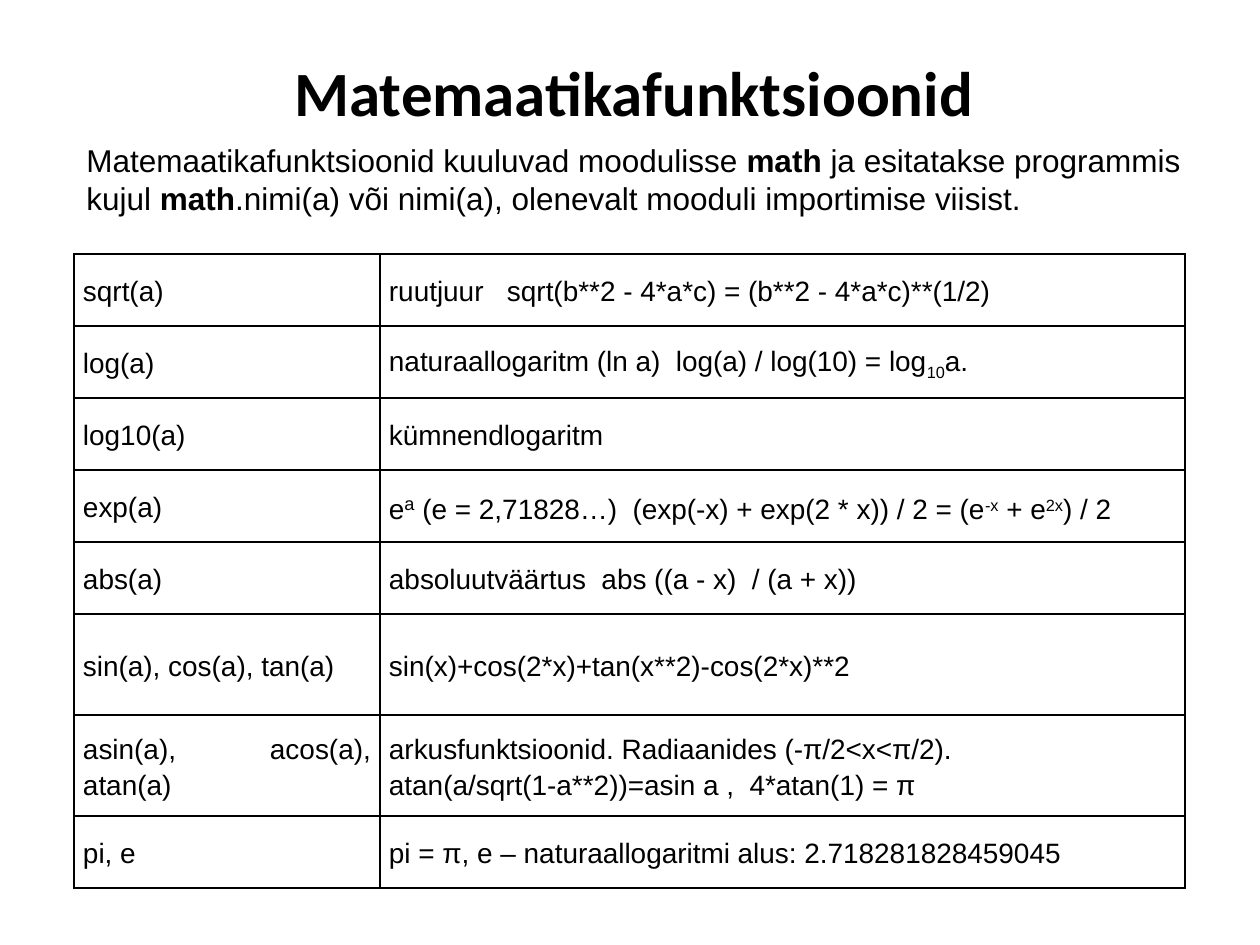
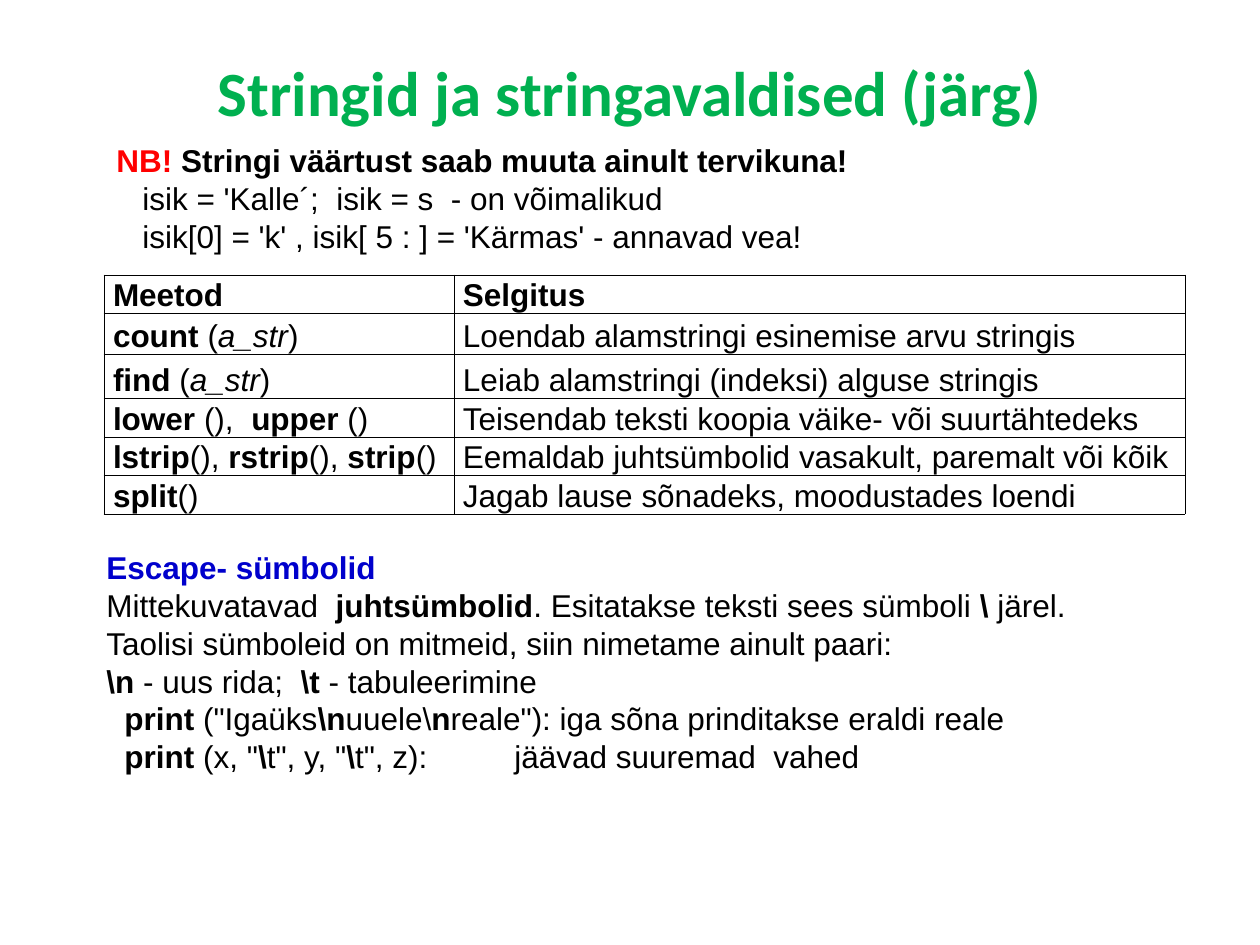
"""Build two slides on mathematical functions and string methods."""
from dataclasses import dataclass
from functools import partial

from lxml.etree import SubElement
from pptx import Presentation
from pptx.dml.color import RGBColor as RGB
from pptx.enum.text import MSO_ANCHOR as ANCHOR, PP_ALIGN as ALIGN
from pptx.oxml.ns import qn
from pptx.util import Emu, Pt

PX = 914400 / 126


@dataclass(frozen=True)
class Theme:
    ink: str = "000000"
    green: str = "00B050"
    red: str = "FF0000"
    blue: str = "0000CC"
    head_font: str = "Calibri"
    body_font: str = "Arial"
    title: int = 36
    body: int = 18
    cell: int = 16


T = Theme()


@dataclass
class Run:
    text: str
    bold: bool = False
    italic: bool = False
    color: str = T.ink
    size: int = 0
    base: int = 0


@dataclass
class Par:
    runs: list
    indent: int = 0
    tab: int = 0


B = partial(Run, bold=True)
I = partial(Run, italic=True)
SUP = partial(Run, base=30)
SUB = partial(Run, base=-25)


def px(n):
    return Emu(round(n * PX))


def add_run(p, run, size, font):
    run = Run(run) if isinstance(run, str) else run
    r = p.add_run()
    r.text = run.text
    r.font.name = font
    r.font.size = Pt(run.size or size)
    r.font.bold = run.bold
    r.font.italic = run.italic
    r.font.color.rgb = RGB.from_string(run.color)
    if run.base:
        r.font._element.set("baseline", str(run.base * 1000))


def fill_text(tf, pars, size, font=T.body_font, align=ALIGN.LEFT, spacing=1.0):
    for n, par in enumerate(pars):
        par = par if isinstance(par, Par) else Par(par)
        p = tf.add_paragraph() if n else tf.paragraphs[0]
        p.alignment = align
        p.line_spacing = spacing
        pPr = p._p.get_or_add_pPr()
        if par.indent:
            pPr.set("marL", str(px(par.indent)))
        if par.tab:
            tabs = SubElement(pPr, qn("a:tabLst"))
            SubElement(tabs, qn("a:tab"), pos=str(px(par.tab)), algn="l")
        for run in par.runs:
            add_run(p, run, size, font)


def add_text(s, x, y, w, h, pars, size=T.body, anchor=ANCHOR.TOP, **style):
    tf = s.shapes.add_textbox(px(x), px(y), px(w), px(h)).text_frame
    tf.word_wrap = True
    tf.vertical_anchor = anchor
    fill_text(tf, pars, size, **style)


def add_title(s, text, color=T.ink, x=63):
    add_text(s, x, 38, 1134, 107, [[B(text, color=color)]], T.title,
             ANCHOR.MIDDLE, font=T.head_font, align=ALIGN.CENTER)


def set_borders(cell, width):
    tcPr = cell._tc.get_or_add_tcPr()
    for side in ("lnL", "lnR", "lnT", "lnB"):
        ln = SubElement(tcPr, qn(f"a:{side}"), w=str(Pt(width)))
        fill = SubElement(ln, qn("a:solidFill"))
        SubElement(fill, qn("a:srgbClr"), val=T.ink)


def add_table(s, x, y, cols, heights, rows, size, border, anchor, **style):
    tbl = s.shapes.add_table(len(rows), len(cols), px(x), px(y),
                             px(sum(cols)), px(sum(heights))).table
    tbl.first_row = tbl.horz_banding = False
    for col, w in zip(tbl.columns, cols):
        col.width = px(w)
    for row, h, texts in zip(tbl.rows, heights, rows):
        row.height = px(h)
        for cell, pars in zip(row.cells, texts):
            cell.margin_left = cell.margin_right = px(9)
            cell.margin_top = cell.margin_bottom = 0
            cell.vertical_anchor = anchor
            set_borders(cell, border)
            cell.fill.background()
            fill_text(cell.text_frame, pars, size, **style)


def math_slide(s):
    add_title(s, "Matemaatikafunktsioonid", x=67)
    functions = [
        ("sqrt(a)", [Par(["ruutjuur\tsqrt(b**2 - 4*a*c) = (b**2 - 4*a*c)**(1/2)"], tab=118)]),
        ("log(a)", [["naturaallogaritm (ln a)  log(a) / log(10) = log", SUB("10"), "a."]]),
        ("log10(a)", [["kümnendlogaritm"]]),
        ("exp(a)", [["e", SUP("a", size=T.body),
                     " (e = 2,71828…)  (exp(-x) + exp(2 * x)) / 2 = (e",
                     SUP("-x"), " + e", SUP("2x"), ") / 2"]]),
        ("abs(a)", [["absoluutväärtus  abs ((a - x)  / (a + x))"]]),
        ("sin(a), cos(a), tan(a)", [["sin(x)+cos(2*x)+tan(x**2)-cos(2*x)**2"]]),
        ("asin(a), acos(a), atan(a)",
         [["arkusfunktsioonid. Radiaanides (-π/2<x<π/2)."],
          ["atan(a/sqrt(1-a**2))=asin a ,  4*atan(1) = π"]]),
        ("pi, e", [["pi = π, e – naturaallogaritmi alus: 2.718281828459045"]]),
    ]
    add_table(s, 74, 254, [306, 805], [72] * 5 + [101] * 2 + [72],
              [([[name]], pars) for name, pars in functions],
              T.cell, 1, ANCHOR.MIDDLE, align=ALIGN.JUSTIFY, spacing=1.15)
    add_text(s, 74, 135, 1142, 127, [
        ["Matemaatikafunktsioonid kuuluvad moodulisse ", B("math"),
         " ja esitatakse programmis kujul ", B("math"),
         ".nimi(a) või nimi(a), olenevalt mooduli importimise viisist."]])


def string_slide(s):
    add_title(s, "Stringid ja stringavaldised (järg)", T.green)
    add_text(s, 104, 135, 1091, 127, [
        [B("NB! ", color=T.red), B("Stringi väärtust saab muuta ainult tervikuna!")],
        Par(["isik = 'Kalle´;  isik = s  - on võimalikud"], indent=26),
        Par(["isik[0] = 'k' , isik[ 5 : ] = 'Kärmas' - annavad vea!"], indent=26)])
    methods = [
        ([B("Meetod")], B("Selgitus")),
        ([B("count "), "(", I("a_str"), ")"], "Loendab alamstringi esinemise arvu stringis"),
        ([B("find "), "(", I("a_str"), ")"], "Leiab alamstringi (indeksi) alguse stringis"),
        ([B("lower "), "(),  ", B("upper "), "()"],
         "Teisendab teksti koopia väike- või suurtähtedeks"),
        ([B("lstrip"), "(), ", B("rstrip"), "(), ", B("strip"), "()"],
         "Eemaldab juhtsümbolid vasakult, paremalt või kõik"),
        ([B("split"), "()"], "Jagab lause sõnadeks, moodustades loendi"),
    ]
    add_table(s, 104, 275, [350, 731], [38, 41, 44, 39, 38, 39],
              [([name], [[text]]) for name, text in methods],
              T.body, 0.5, ANCHOR.BOTTOM)
    add_text(s, 94, 542, 1071, 242, [
        [B("Escape- sümbolid", color=T.blue)],
        ["Mittekuvatavad  ", B("juhtsümbolid"), ". Esitatakse teksti sees sümboli ",
         B("\\ "), "järel."],
        ["Taolisi sümboleid on mitmeid, siin nimetame ainult paari:"],
        [B("\\n"), " - uus rida;  ", B("\\t "), "- tabuleerimine"],
        Par([B("print"), ' ("Igaüks', B("\\n"), "uuele\\", B("n"),
             'reale"): iga sõna prinditakse eraldi reale'], indent=18),
        Par([B("print"), ' (x, "', B("\\"), 't", y, "', B("\\"),
             't", z):\tjäävad suuremad  vahed'], indent=18, tab=390)])


def main():
    prs = Presentation()
    prs.slide_width, prs.slide_height = px(1260), px(945)
    for build in (math_slide, string_slide):
        build(prs.slides.add_slide(prs.slide_layouts[6]))
    prs.save("out.pptx")


if __name__ == "__main__":
    main()
